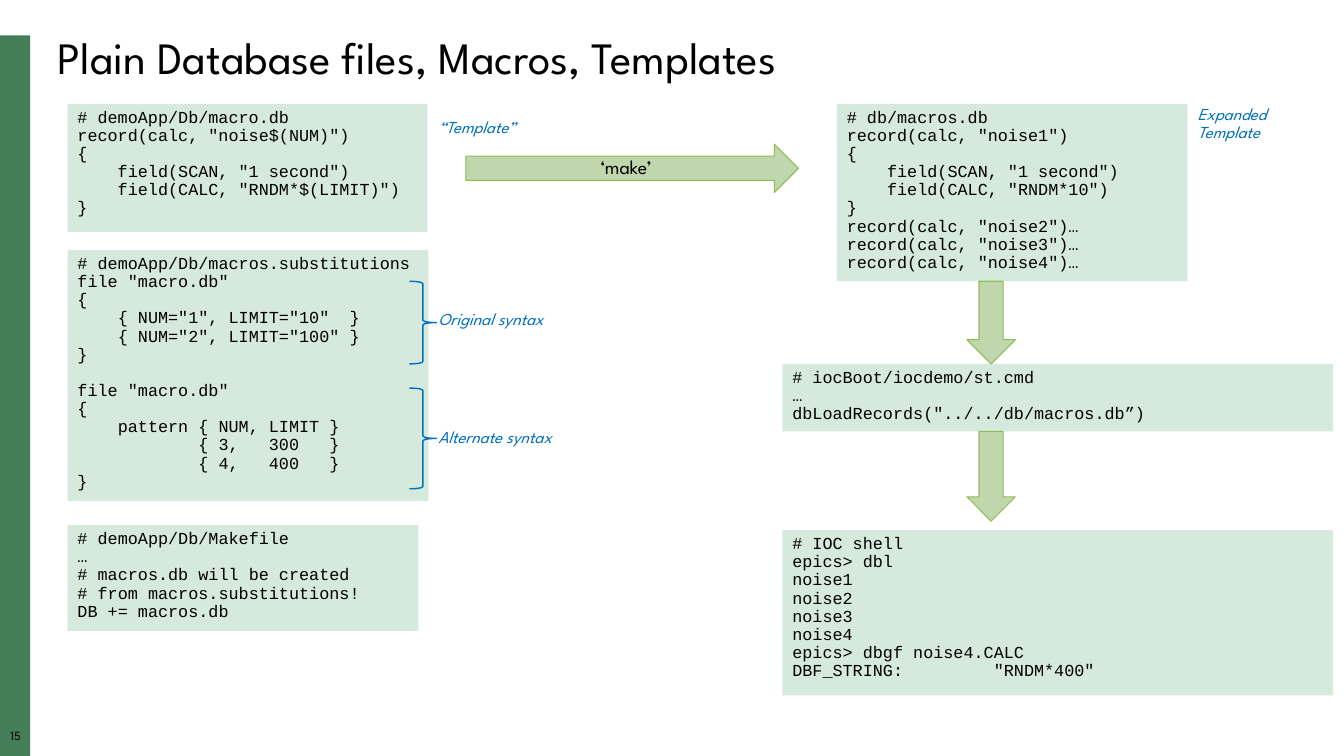
"""Build the slide on plain database files, macros and templates."""
from pptx import Presentation
from pptx.dml.color import RGBColor
from pptx.enum.shapes import MSO_SHAPE as Shape
from pptx.enum.text import MSO_ANCHOR as Anchor, PP_ALIGN as Align
from pptx.util import Inches, Pt

TITLE = "Plain Database files, Macros, Templates"
SANS, MONO = "League Spartan", "Courier New"
BLACK, BLUE, MINT = "000000", "0070C0", "D6E9DD"
LEAF, EDGE, GREEN = "C0D6AC", "8FBB55", "447E59"

CODE = [
    ((0.67, 1.03, 3.57, 1.27), '''# demoApp/Db/macro.db
record(calc, "noise$(NUM)")
{
    field(SCAN, "1 second")
    field(CALC, "RNDM*$(LIMIT)")
}'''),
    ((0.67, 2.48, 3.58, 2.49), '''# demoApp/Db/macros.substitutions
file "macro.db"
{
    { NUM="1", LIMIT="10"  }
    { NUM="2", LIMIT="100" }
}

file "macro.db"
{
    pattern { NUM, LIMIT }
            { 3,   300   }
            { 4,   400   }
}'''),
    ((0.67, 5.21, 3.48, 1.05), '''# demoApp/Db/Makefile
…
# macros.db will be created
# from macros.substitutions!
DB += macros.db'''),
    ((8.3, 1.03, 3.48, 1.76), '''# db/macros.db
record(calc, "noise1")
{
    field(SCAN, "1 second")
    field(CALC, "RNDM*10")
}
record(calc, "noise2")…
record(calc, "noise3")…
record(calc, "noise4")…'''),
    ((7.76, 3.61, 5.46, 0.67), '''# iocBoot/iocdemo/st.cmd
…
dbLoadRecords("../../db/macros.db”)'''),
    ((7.76, 5.26, 5.46, 1.64), '''# IOC shell
epics> dbl
noise1
noise2
noise3
noise4
epics> dbgf noise4.CALC
DBF_STRING:         "RNDM*400"'''),
]
ARROWS = [
    (Shape.RIGHT_ARROW, (4.62, 1.43, 3.3, 0.48), "‘make’"),
    (Shape.DOWN_ARROW, (9.59, 2.79, 0.48, 0.82), ""),
    (Shape.DOWN_ARROW, (9.59, 4.28, 0.48, 0.89), ""),
]
BRACES = [(4.06, 2.79, 0.27, 0.82), (4.06, 3.85, 0.27, 1)]
NOTES = [
    ((4.25, 1.13, 1.13, 0.28), "“Template”"),
    ((4.25, 3.04, 1.39, 0.28), "Original syntax"),
    ((4.25, 4.21, 1.52, 0.28), "Alternate syntax"),
    ((11.78, 1, 1.05, 0.46), "Expanded\nTemplate"),
]
NOTE = {"name": SANS, "size": Pt(12), "italic": True}
LISTING = {"name": MONO, "size": Pt(12)}


def color(code):
    return RGBColor.from_string(code)


def write(frame, text, font, ink=BLACK, align=Align.LEFT, anchor=Anchor.TOP):
    frame.vertical_anchor = anchor
    para, gap = None, 0
    for line in text.split("\n"):
        if not line:
            gap = 13
            continue
        para = frame.add_paragraph() if para else frame.paragraphs[0]
        para.alignment, para.line_spacing = align, 0.9
        if gap:
            para.space_before = Pt(gap)
            gap = 0
        run = para.add_run()
        run.text = line
        for key, value in font.items():
            setattr(run.font, key, value)
        run.font.color.rgb = color(ink)


def draw(slide, kind, box, fill=None, edge=None, width=0.75):
    shape = slide.shapes.add_shape(kind, *map(Inches, box))
    shape.shadow.inherit = False
    if fill:
        shape.fill.solid()
        shape.fill.fore_color.rgb = color(fill)
    else:
        shape.fill.background()
    if edge:
        shape.line.color.rgb = color(edge)
        shape.line.width = Pt(width)
    else:
        shape.line.fill.background()
    return shape


def label(slide, box, text, font, ink, wrap=False, **place):
    frame = slide.shapes.add_textbox(*map(Inches, box)).text_frame
    frame.word_wrap = wrap
    write(frame, text, font, ink, **place)
    return frame


def main():
    deck = Presentation()
    deck.slide_width, deck.slide_height = Inches(13.33), Inches(7.5)
    slide = deck.slides.add_slide(deck.slide_layouts[5])

    title = slide.shapes.title
    sides = ("left", "top", "width", "height")
    for side, value in zip(sides, (0.47, 0.3, 12.5, 0.59)):
        setattr(title, side, Inches(value))
    write(title.text_frame, TITLE, {"name": SANS, "size": Pt(32)},
          anchor=Anchor.MIDDLE)

    draw(slide, Shape.RECTANGLE, (0, 0.35, 0.3, 7.15), GREEN)
    page = label(slide, (0, 7.24, 0.31, 0.17), "15",
                 {"name": SANS, "size": Pt(9)}, BLACK, True,
                 align=Align.CENTER)
    for side in ("left", "top", "right", "bottom"):
        setattr(page, f"margin_{side}", 0)

    for box, text in CODE:
        panel = draw(slide, Shape.RECTANGLE, box, MINT)
        write(panel.text_frame, text, LISTING)
    for kind, box, text in ARROWS:
        arrow = draw(slide, kind, box, LEAF, EDGE)
        if text:
            write(arrow.text_frame, text, {"name": SANS, "size": Pt(14)},
                  align=Align.CENTER, anchor=Anchor.MIDDLE)
    for box in BRACES:
        draw(slide, Shape.RIGHT_BRACE, box, edge=BLUE, width=1)
    for box, text in NOTES:
        label(slide, box, text, NOTE, BLUE)

    deck.save("out.pptx")


if __name__ == "__main__":
    main()
